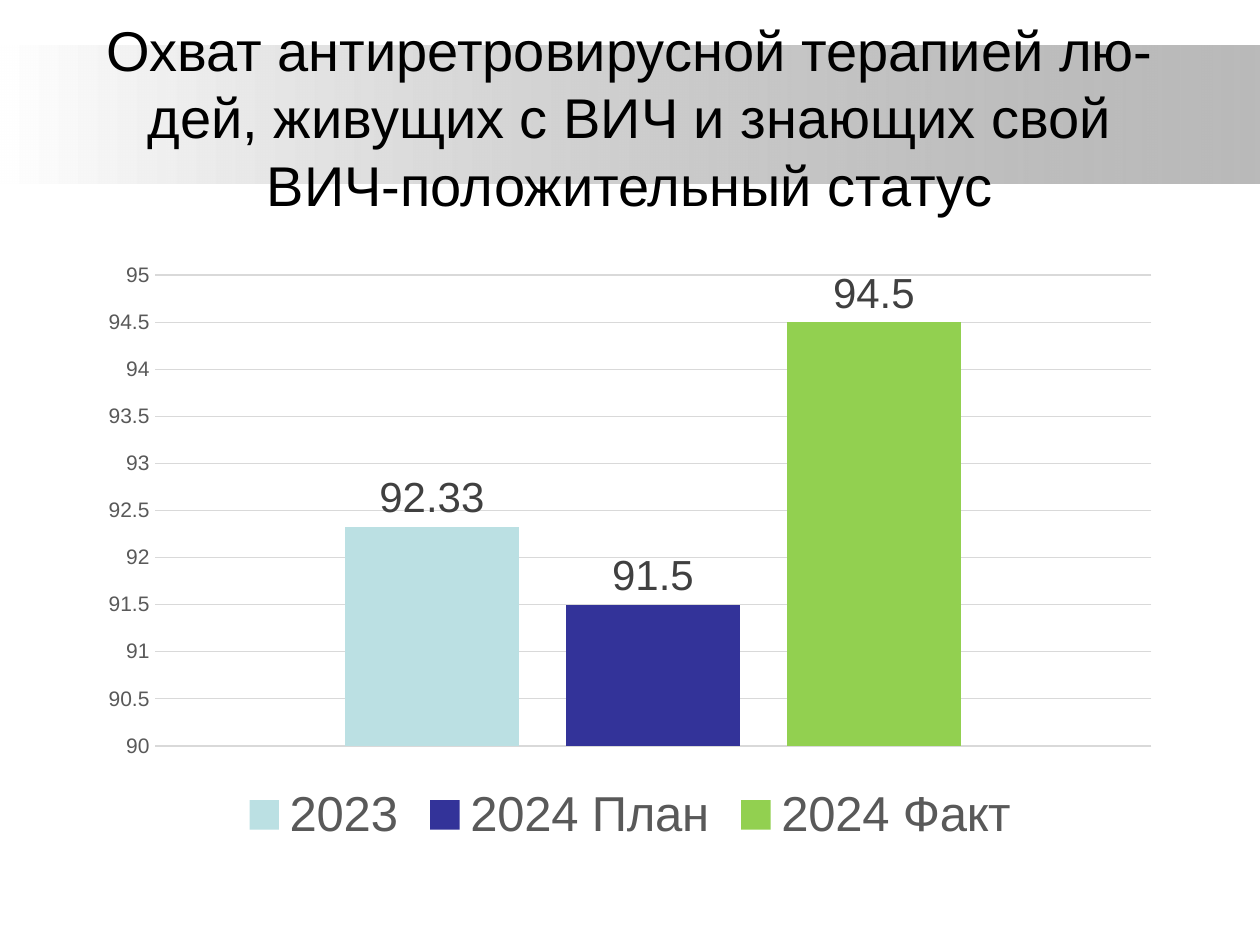
from lxml.etree import SubElement
from pptx import Presentation
from pptx.chart.data import CategoryChartData as ChartData
from pptx.dml.color import RGBColor
from pptx.enum.chart import XL_CHART_TYPE as ChartType
from pptx.enum.chart import XL_LABEL_POSITION as LabelPosition
from pptx.enum.chart import XL_LEGEND_POSITION as LegendPosition
from pptx.enum.chart import XL_TICK_MARK as TickMark
from pptx.enum.shapes import MSO_SHAPE as Shape
from pptx.enum.text import MSO_ANCHOR as Anchor
from pptx.enum.text import MSO_AUTO_SIZE as AutoSize
from pptx.enum.text import PP_ALIGN as Align
from pptx.oxml.ns import qn
from pptx.util import Pt

FONT = "Arial"
TITLE = "Охват антиретровирусной терапией лю-дей, живущих с ВИЧ и знающих свой ВИЧ-положительный статус"
SERIES = [
    ("2023", 92.33, "BBE0E3"),
    ("2024 План", 91.5, "333399"),
    ("2024 Факт", 94.5, "92D050"),
]


def color(value):
    return RGBColor.from_string(value)


def style_font(font, size, value):
    font.name = FONT
    font.size = Pt(size)
    font.color.rgb = color(value)


def add_band(slide):
    """Add the band behind the title, fading from white to half-transparent grey."""
    band = slide.shapes.add_shape(Shape.RECTANGLE, 0, Pt(25.92), Pt(720), Pt(79.2))
    band.shadow.inherit = False
    band.line.fill.background()
    band.fill.gradient()
    band.fill.gradient_angle = 0
    start, end = band.fill.gradient_stops
    start.position, end.position = 0, 1
    start.color.rgb = color("FFFFFF")
    end.color.rgb = color("808080")
    end_color = band._element.spPr.findall(".//" + qn("a:srgbClr"))[-1]
    SubElement(end_color, qn("a:alpha"), val="54000")
    slide.shapes._spTree.insert(2, band._element)


def set_title(slide):
    title = slide.shapes.title
    title.left, title.top, title.width, title.height = Pt(36), Pt(21.6), Pt(648), Pt(90)
    frame = title.text_frame
    frame.text = TITLE
    frame.word_wrap = True
    frame.auto_size = AutoSize.NONE
    frame.vertical_anchor = Anchor.MIDDLE
    paragraph = frame.paragraphs[0]
    paragraph.alignment = Align.CENTER
    style_font(paragraph.font, 32, "000000")


def format_axes(chart):
    chart.category_axis.visible = False
    axis = chart.value_axis
    axis.minimum_scale, axis.maximum_scale, axis.major_unit = 90, 95, 0.5
    axis.major_tick_mark = axis.minor_tick_mark = TickMark.NONE
    axis.format.line.fill.background()
    axis.major_gridlines.format.line.color.rgb = color("D9D9D9")
    axis.major_gridlines.format.line.width = Pt(0.75)
    axis.tick_labels.number_format = "General"
    axis.tick_labels.number_format_is_linked = False
    style_font(axis.tick_labels.font, 12, "595959")


def format_series(series, fill):
    series.format.fill.solid()
    series.format.fill.fore_color.rgb = color(fill)
    series.invert_if_negative = False
    labels = series.data_labels
    labels.show_value = True
    labels.position = LabelPosition.OUTSIDE_END
    style_font(labels.font, 24, "404040")


def add_column_chart(slide):
    data = ChartData()
    data.categories = ["1"]
    for name, value, _ in SERIES:
        data.add_series(name, [value])
    chart = slide.shapes.add_chart(
        ChartType.COLUMN_CLUSTERED, Pt(49.68), Pt(144), Pt(620.64), Pt(342.72), data
    ).chart
    chart.has_title = False
    style_font(chart.font, 10, "000000")
    format_axes(chart)
    plot = chart.plots[0]
    plot.gap_width, plot.overlap = 219, -27
    plot.vary_by_categories = False
    for series, (_, _, fill) in zip(plot.series, SERIES):
        format_series(series, fill)
    chart.has_legend = True
    chart.legend.position = LegendPosition.BOTTOM
    chart.legend.include_in_layout = False
    style_font(chart.legend.font, 28, "595959")


def main():
    presentation = Presentation()
    presentation.slide_width, presentation.slide_height = Pt(720), Pt(540)
    slide = presentation.slides.add_slide(presentation.slide_layouts[5])
    add_band(slide)
    set_title(slide)
    add_column_chart(slide)
    presentation.save("out.pptx")


if __name__ == "__main__":
    main()
